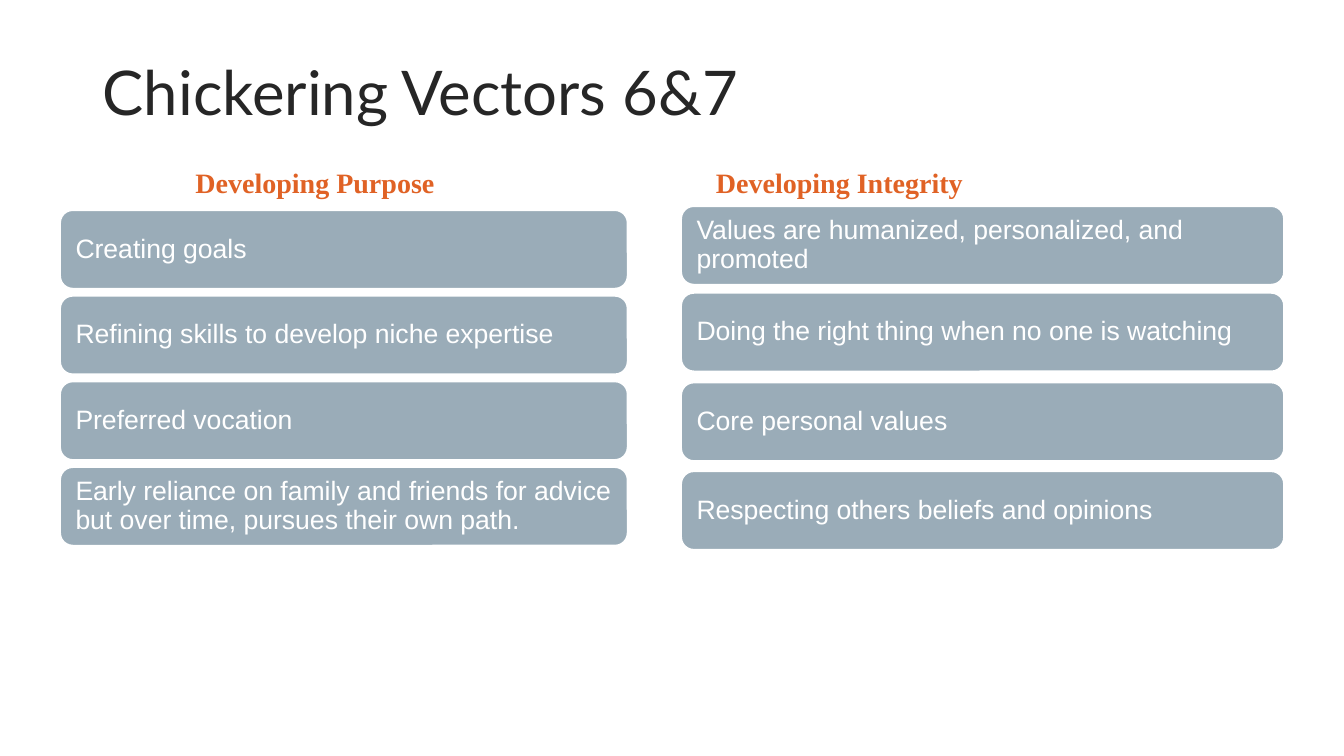
from dataclasses import dataclass

from pptx import Presentation
from pptx.dml.color import RGBColor
from pptx.enum.shapes import MSO_SHAPE
from pptx.enum.text import MSO_ANCHOR, MSO_AUTO_SIZE, PP_ALIGN
from pptx.shapes.base import BaseShape
from pptx.slide import Slide
from pptx.util import Inches, Pt

SLIDE_WIDTH = Inches(13.33)
SLIDE_HEIGHT = Inches(7.5)
INK = RGBColor(0x26, 0x26, 0x26)
ORANGE = RGBColor(0xE0, 0x62, 0x25)
SLATE = RGBColor(0x9A, 0xAC, 0xB8)
WHITE = RGBColor(0xFF, 0xFF, 0xFF)
HEADING_TOP = 15.07
HEADING_HEIGHT = 12
CARD_HEIGHT = 10.53


@dataclass(frozen=True)
class Box:
    """Edges in percent of the slide's width and height."""

    left: float
    top: float
    width: float
    height: float

    def emu(self) -> tuple[int, int, int, int]:
        return (
            round(SLIDE_WIDTH * self.left / 100),
            round(SLIDE_HEIGHT * self.top / 100),
            round(SLIDE_WIDTH * self.width / 100),
            round(SLIDE_HEIGHT * self.height / 100),
        )


@dataclass(frozen=True)
class Vector:
    heading: str
    placeholder: int
    heading_left: float
    heading_width: float
    alignment: PP_ALIGN
    cards_left: float
    cards_width: float
    card_tops: tuple[float, ...]
    traits: tuple[str, ...]


VECTORS = (
    Vector(
        "Developing Purpose", 1, 1.35, 42.31, PP_ALIGN.CENTER, 4.43, 42.31,
        tuple(27.73 + 11.33 * row for row in range(4)),
        (
            "Creating goals",
            "Refining skills to develop niche expertise",
            "Preferred vocation",
            "Early reliance on family and friends for advice but over time, "
            "pursues their own path.",
        ),
    ),
    Vector(
        "Developing Integrity", 3, 50.64, 42.54, PP_ALIGN.LEFT, 50.64, 44.94,
        (27.2, 38.67, 50.53, 62.27),
        (
            "Values are humanized, personalized, and promoted",
            "Doing the right thing when no one is watching",
            "Core personal values",
            "Respecting others beliefs and opinions",
        ),
    ),
)


def place(shape: BaseShape, box: Box) -> None:
    shape.left, shape.top, shape.width, shape.height = box.emu()


def write(shape: BaseShape, text: str, font_name: str, size: float,
          color: RGBColor, anchor: MSO_ANCHOR, alignment: PP_ALIGN,
          bold: bool = False) -> None:
    frame = shape.text_frame
    frame.text = text
    frame.word_wrap = True
    frame.auto_size = MSO_AUTO_SIZE.NONE
    frame.vertical_anchor = anchor
    paragraph = frame.paragraphs[0]
    paragraph.alignment = alignment
    paragraph.line_spacing = 0.9
    paragraph.space_before = Pt(0)
    paragraph.font.name = font_name
    paragraph.font.size = Pt(size)
    paragraph.font.bold = bold
    paragraph.font.color.rgb = color


def add_heading(slide: Slide, vector: Vector) -> None:
    heading = slide.placeholders[vector.placeholder]
    place(heading, Box(vector.heading_left, HEADING_TOP,
                       vector.heading_width, HEADING_HEIGHT))
    write(heading, vector.heading, "Times New Roman", 20, ORANGE,
          MSO_ANCHOR.BOTTOM, vector.alignment, bold=True)
    properties = heading.text_frame.paragraphs[0]._p.get_or_add_pPr()
    properties.set("marL", str(Inches(0.5)))
    properties.set("indent", str(Inches(-0.25)))


def add_card(slide: Slide, box: Box, trait: str) -> None:
    card = slide.shapes.add_shape(MSO_SHAPE.ROUNDED_RECTANGLE, *box.emu())
    card.shadow.inherit = False
    card.fill.solid()
    card.fill.fore_color.rgb = SLATE
    card.line.color.rgb = WHITE
    card.line.width = Pt(2)
    frame = card.text_frame
    frame.margin_left = frame.margin_right = Inches(0.12)
    frame.margin_top = frame.margin_bottom = Inches(0.08)
    write(card, trait, "Arial", 19, WHITE, MSO_ANCHOR.MIDDLE, PP_ALIGN.LEFT)


def main() -> None:
    presentation = Presentation()
    presentation.slide_width = SLIDE_WIDTH
    presentation.slide_height = SLIDE_HEIGHT
    slide = presentation.slides.add_slide(presentation.slide_layouts[4])
    for unused in (2, 4):
        content = slide.placeholders[unused].element
        content.getparent().remove(content)

    title = slide.shapes.title
    place(title, Box(6.9, 2.93, 86.27, 19.33))
    write(title, "Chickering Vectors 6&7", "Lato", 44, INK,
          MSO_ANCHOR.MIDDLE, PP_ALIGN.LEFT)

    for vector in VECTORS:
        add_heading(slide, vector)
        for top, trait in zip(vector.card_tops, vector.traits):
            add_card(slide, Box(vector.cards_left, top,
                                vector.cards_width, CARD_HEIGHT), trait)

    presentation.save("out.pptx")


if __name__ == "__main__":
    main()
